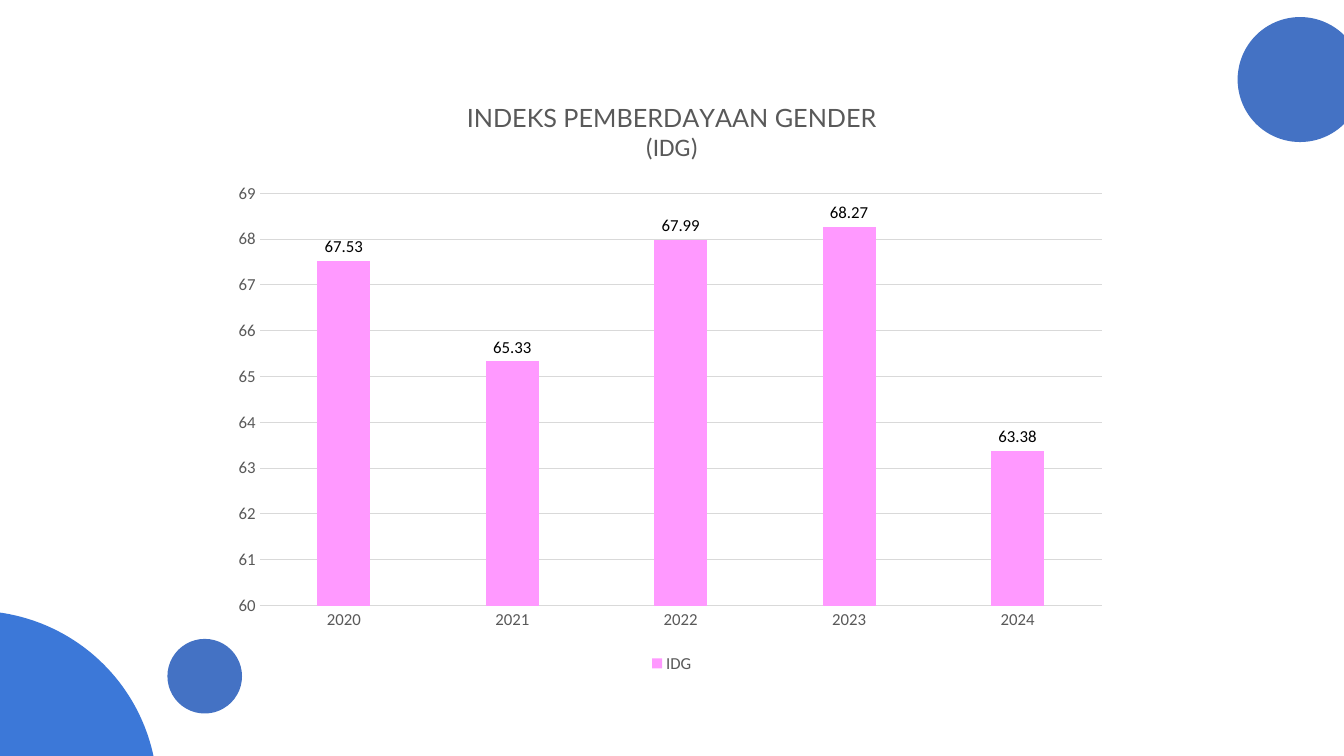
from lxml import etree
from pptx import Presentation
from pptx.chart.data import CategoryChartData
from pptx.dml.color import RGBColor
from pptx.enum.chart import XL_CHART_TYPE, XL_LABEL_POSITION, XL_LEGEND_POSITION, XL_TICK_MARK
from pptx.enum.shapes import MSO_SHAPE
from pptx.oxml.ns import qn
from pptx.util import Cm, Pt

COLUMNS = XL_CHART_TYPE.COLUMN_CLUSTERED
OUTSIDE_END = XL_LABEL_POSITION.OUTSIDE_END
BOTTOM = XL_LEGEND_POSITION.BOTTOM
NO_TICK = XL_TICK_MARK.NONE
ELLIPSE = MSO_SHAPE.OVAL

# Content
TITLE_LINES = [("INDEKS PEMBERDAYAAN GENDER", "Lato"), ("(IDG)", "Calibri")]
SERIES_NAME = "IDG"
INDEX_BY_YEAR = {"2020": 67.53, "2021": 65.33, "2022": 67.99, "2023": 68.27, "2024": 63.38}

COLOURS = {
    "bright": "3C78D8", "blue": "4472C4", "pink": "FF99FF",
    "grey": "595959", "grid": "D9D9D9", "black": "000000",
}
# Left, top, diameter in cm, colour
CIRCLES = [
    (-5.28, 15.39, 9.25, "bright"),
    (4.22, 16.1, 1.88, "blue"),
    (31.19, 0.43, 3.15, "blue"),
]
CHART_FRAME = (5.64, 2.01, 22.58, 15.06)
# Inner plot area as shares of the chart frame
PLOT_LAYOUT = {
    "layoutTarget": "inner", "xMode": "edge", "yMode": "edge",
    "x": 0.04, "y": 0.19, "w": 0.94, "h": 0.69,
}


def colour(name):
    return RGBColor.from_string(COLOURS[name])


def set_font(font, size, colour_name, family="Calibri"):
    for key, value in {"size": Pt(size), "name": family, "bold": False}.items():
        setattr(font, key, value)
    font.color.rgb = colour(colour_name)


def set_line(line):
    line.color.rgb = colour("grid")
    line.width = Pt(0.75)


deck = Presentation()
deck.slide_width, deck.slide_height = Cm(33.87), Cm(19.05)
page = deck.slides.add_slide(deck.slide_layouts[6])

# Decorative circles
for left, top, diameter, fill in CIRCLES:
    circle = page.shapes.add_shape(ELLIPSE, Cm(left), Cm(top), Cm(diameter), Cm(diameter))
    circle.shadow.inherit = False
    circle.fill.solid()
    circle.fill.fore_color.rgb = colour(fill)
    circle.line.fill.background()

# Column chart
data = CategoryChartData()
data.categories = list(INDEX_BY_YEAR)
data.add_series(SERIES_NAME, list(INDEX_BY_YEAR.values()))
chart = page.shapes.add_chart(COLUMNS, *map(Cm, CHART_FRAME), data).chart
set_font(chart.font, 10, "black")

# Title
title = chart.chart_title
title.include_in_layout = False
frame = title.text_frame
for number, (text, family) in enumerate(TITLE_LINES):
    para = frame.add_paragraph() if number else frame.paragraphs[0]
    span = para.add_run()
    span.text = text
    set_font(para.font, 18, "grey", family)
    set_font(span.font, 18, "grey", family)

# Columns and their values
plot = chart.plots[0]
plot.gap_width, plot.overlap, plot.vary_by_categories = 219, -27, False
columns = plot.series[0]
columns.format.fill.solid()
columns.format.fill.fore_color.rgb = colour("pink")
labels = columns.data_labels
for key, value in {"show_value": True, "position": OUTSIDE_END}.items():
    setattr(labels, key, value)
set_font(labels.font, 12, "black")

# Axes
years, values = chart.category_axis, chart.value_axis
for axis in (years, values):
    axis.major_tick_mark = axis.minor_tick_mark = NO_TICK
    set_font(axis.tick_labels.font, 12, "grey")
set_line(years.format.line)
values.format.line.fill.background()
set_line(values.major_gridlines.format.line)
for key, value in {"minimum_scale": 60, "maximum_scale": 69, "major_unit": 1}.items():
    setattr(values, key, value)

# Legend
chart.has_legend = True
chart.legend.position = BOTTOM
chart.legend.include_in_layout = False
set_font(chart.legend.font, 12, "grey")

# Plot area placement
area = chart.element.find(".//" + qn("c:plotArea"))
layout = area.find(qn("c:layout"))
if layout is None:
    layout = etree.Element(qn("c:layout"))
    area.insert(0, layout)
manual = etree.SubElement(layout, qn("c:manualLayout"))
for key, value in PLOT_LAYOUT.items():
    etree.SubElement(manual, qn("c:" + key)).set("val", str(value))

deck.save("out.pptx")
